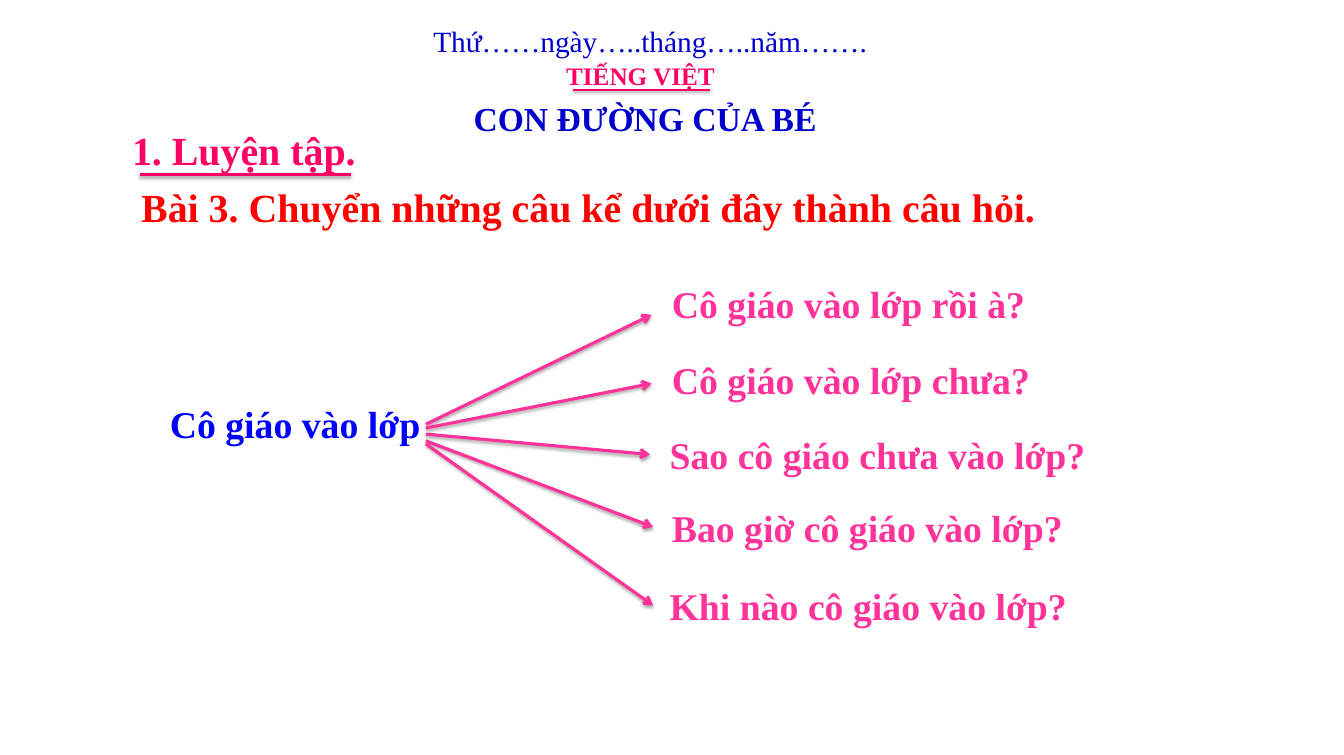
"""Build a Vietnamese lesson slide: one statement leading to five questions."""
from typing import NamedTuple

from lxml import etree
from pptx import Presentation
from pptx.dml.color import RGBColor
from pptx.enum import shapes, text
from pptx.oxml import ns
from pptx.util import Inches, Pt

HUES = {"navy": "0000CC", "blue": "0000FF", "red": "FF0000",
        "rose": "FF0066", "pink": "FF3399", "shade": "000000"}
FACE = "Times New Roman"


class Label(NamedTuple):
    words: str
    left: float
    top: float
    width: float
    height: float
    size: int
    hue: str
    bold: bool = True
    wrap: bool = True
    align: str = "LEFT"
    inset: float = 0.1


class Stroke(NamedTuple):
    start: tuple[float, float]
    end: tuple[float, float]
    hue: str
    weight: int = 3
    arrow: bool = False
    alpha: int = 35
    drop: float = 1.8


class Branch(NamedTuple):
    words: str
    left: float
    top: float
    width: float
    start: float
    end: tuple[float, float]


LABELS = [
    Label("1. Luyện tập.", 1.65, 1.62, 4.58, 0.74, 38, "rose"),
    Label("Bài 3. Chuyển những câu kể dưới đây thành câu hỏi.",
          0.98, 2.37, 15.94, 1.38, 38, "red", align="JUSTIFY", inset=0.89),
    Label("Thứ……ngày…..tháng…..năm…….", 5.64, 0.26, 6.01, 0.57, 28, "navy",
          bold=False, wrap=False),
    Label("TIẾNG VIỆT", 7.4, 0.75, 2.19, 0.5, 24, "rose", wrap=False),
    Label("CON ĐƯỜNG CỦA BÉ", 6.15, 1.25, 4.79, 0.64, 32, "navy",
          wrap=False, align="CENTER"),
    Label("Cô giáo vào lớp", 2.15, 5.26, 3.55, 0.71, 36, "blue", wrap=False),
]
RULES = [
    Stroke((1.85, 2.31), (4.65, 2.31), "rose"),
    Stroke((7.59, 1.19), (9.4, 1.19), "rose", 2, alpha=38, drop=1.6),
]
FORK = 5.64
BRANCHES = [
    Branch("Cô giáo vào lớp rồi à?", 8.8, 3.67, 5.52, 5.62, (8.63, 4.17)),
    Branch("Cô giáo vào lớp chưa?", 8.8, 4.67, 6.44, 5.67, (8.63, 5.08)),
    Branch("Sao cô giáo chưa vào lớp?", 8.77, 5.67, 6.46, 5.75, (8.61, 6.02)),
    Branch("Bao giờ cô giáo vào lớp?", 8.8, 6.63, 6.69, 5.84, (8.65, 6.98)),
    Branch("Khi nào cô giáo vào lớp?", 8.77, 7.67, 6.69, 5.88, (8.65, 8.02)),
]


def tint(name: str) -> RGBColor:
    """Return the named colour."""
    return RGBColor.from_string(HUES[name])


def write(slide, label: Label) -> None:
    """Add one text box."""
    box = slide.shapes.add_textbox(
        *map(Inches, (label.left, label.top, label.width, label.height)))
    frame = box.text_frame
    setup = {"word_wrap": label.wrap, "margin_left": Inches(label.inset),
             "auto_size": text.MSO_AUTO_SIZE.SHAPE_TO_FIT_TEXT}
    for key, value in setup.items():
        setattr(frame, key, value)
    para = frame.paragraphs[0]
    para.alignment = text.PP_ALIGN[label.align]
    run = para.add_run()
    run.text = label.words
    style = {"name": FACE, "size": Pt(label.size), "bold": label.bold}
    for key, value in style.items():
        setattr(run.font, key, value)
    run.font.color.rgb = tint(label.hue)


def draw(slide, stroke: Stroke) -> None:
    """Add one straight line with a soft shadow."""
    line = slide.shapes.add_connector(
        shapes.MSO_CONNECTOR.STRAIGHT,
        *map(Inches, stroke.start + stroke.end))
    line.line.color.rgb = tint(stroke.hue)
    line.line.width = Pt(stroke.weight)
    if stroke.arrow:
        etree.SubElement(line.line._get_or_add_ln(), ns.qn("a:tailEnd"),
                         type="arrow")
    effect = etree.SubElement(line._element.spPr, ns.qn("a:effectLst"))
    shadow = etree.SubElement(
        effect, ns.qn("a:outerShdw"), blurRad=str(Pt(3.1)),
        dist=str(Pt(stroke.drop)), dir=str(90 * 60000), rotWithShape="0")
    shade = etree.SubElement(shadow, ns.qn("a:srgbClr"), val=HUES["shade"])
    etree.SubElement(shade, ns.qn("a:alpha"), val=str(stroke.alpha * 1000))


def main() -> None:
    """Build and save the slide."""
    deck = Presentation()
    deck.slide_width, deck.slide_height = Inches(17.8), Inches(10)
    slide = deck.slides.add_slide(deck.slide_layouts[6])
    for label in LABELS:
        write(slide, label)
    for rule in RULES:
        draw(slide, rule)
    for item in BRANCHES:
        draw(slide, Stroke((FORK, item.start), item.end, "pink", arrow=True))
        write(slide, Label(item.words, item.left, item.top, item.width, 0.71,
                           36, "pink"))
    deck.save("out.pptx")


if __name__ == "__main__":
    main()
